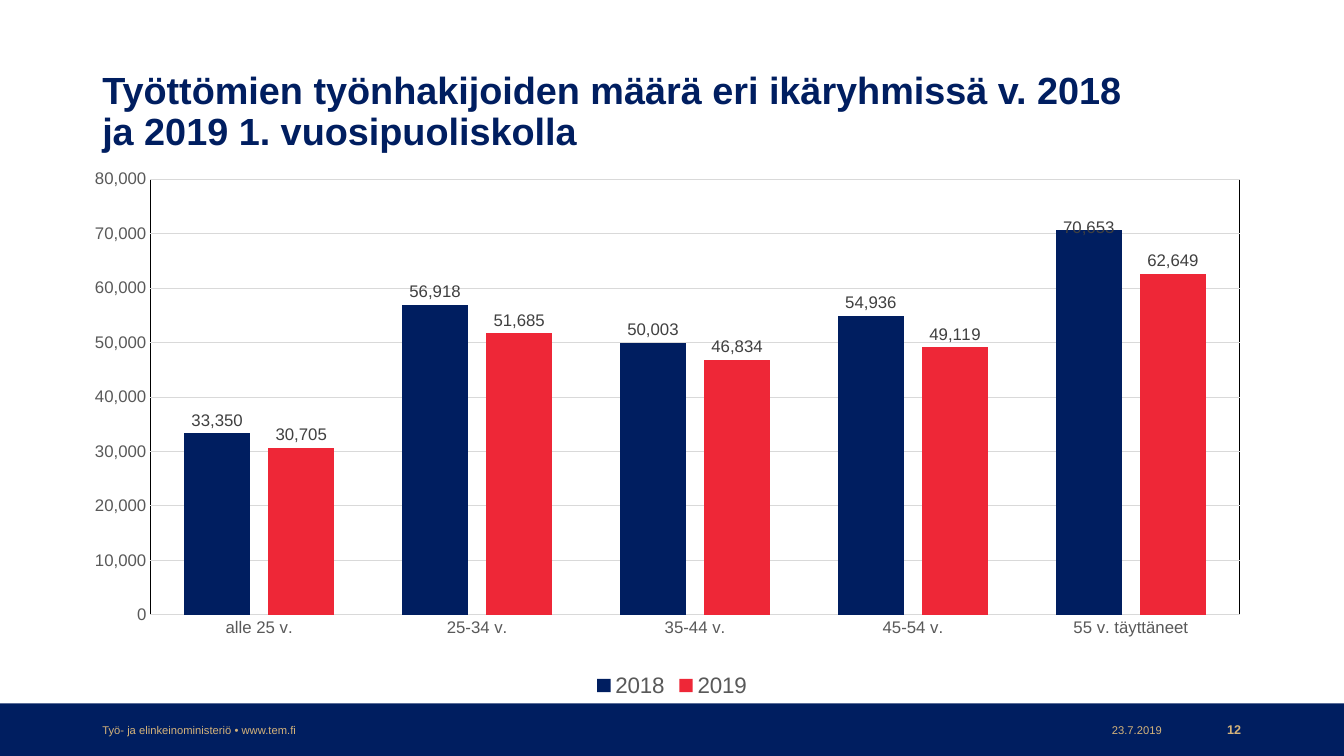
"""Build the slide on unemployed jobseekers by age group in 2018 and 2019."""
from dataclasses import dataclass

from lxml import etree
from pptx import Presentation
from pptx.chart.data import CategoryChartData
from pptx.dml.color import RGBColor
from pptx.enum.chart import XL_CHART_TYPE, XL_LABEL_POSITION, XL_LEGEND_POSITION, XL_TICK_MARK
from pptx.enum.shapes import MSO_SHAPE
from pptx.enum.text import MSO_ANCHOR, PP_ALIGN
from pptx.oxml import parse_xml
from pptx.oxml.ns import nsdecls, qn
from pptx.util import Pt

COLUMNS = XL_CHART_TYPE.COLUMN_CLUSTERED
OUTSIDE_END = XL_LABEL_POSITION.OUTSIDE_END
BOTTOM = XL_LEGEND_POSITION.BOTTOM
NO_TICK = XL_TICK_MARK.NONE
RECTANGLE = MSO_SHAPE.RECTANGLE
MIDDLE = MSO_ANCHOR.MIDDLE
LEFT, RIGHT = PP_ALIGN.LEFT, PP_ALIGN.RIGHT


@dataclass(frozen=True)
class Theme:
    font: str = "Arial"
    navy: str = "001E60"
    red: str = "EE2737"
    gold: str = "D5B37A"
    white: str = "FFFFFF"
    black: str = "000000"
    grid: str = "D9D9D9"
    axis_text: str = "595959"
    label_text: str = "404040"
    title_size: float = 27
    legend_size: float = 16
    chart_size: float = 12
    number_size: float = 9
    footer_size: float = 8


theme = Theme()


def style_font(font, size, color, bold=False):
    values = {"name": theme.font, "size": Pt(size), "bold": bold}
    for attribute, value in values.items():
        setattr(font, attribute, value)
    font.color.rgb = RGBColor.from_string(color)


def manual_layout(**values):
    layout = parse_xml(f"<c:layout {nsdecls('c')}><c:manualLayout/></c:layout>")
    for name, value in values.items():
        etree.SubElement(layout[0], qn(f"c:{name}")).set("val", str(value))
    return layout


presentation = Presentation()
presentation.slide_width, presentation.slide_height = Pt(960), Pt(540)
slide = presentation.slides.add_slide(presentation.slide_layouts[6])

footer_bar = slide.shapes.add_shape(RECTANGLE, Pt(0), Pt(502.5), Pt(960), Pt(37.5))
footer_bar.shadow.inherit = False
footer_bar.fill.solid()
footer_bar.fill.fore_color.rgb = RGBColor.from_string(theme.navy)
footer_bar.line.fill.background()

title = "Työttömien työnhakijoiden määrä eri ikäryhmissä v. 2018 ja 2019 1. vuosipuoliskolla"
texts = [
    (title, (66, 41.5, 756, 78.5), LEFT, theme.title_size, theme.navy, True),
    ("23.7.2019", (763, 513, 74, 16.5), RIGHT, theme.footer_size, theme.gold, False),
    ("Työ- ja elinkeinoministeriö • www.tem.fi", (66, 513, 323, 16.5), LEFT,
     theme.footer_size, theme.gold, False),
    ("12", (837, 513, 56.5, 16.5), RIGHT, theme.number_size, theme.gold, True),
]
for text, box, alignment, size, color, bold in texts:
    text_box = slide.shapes.add_textbox(*map(Pt, box))
    frame = text_box.text_frame
    frame.word_wrap = True
    frame.vertical_anchor = MIDDLE
    paragraph = frame.paragraphs[0]
    paragraph.text = text
    paragraph.alignment = alignment
    paragraph.line_spacing = 0.9 if text == title else 1.0
    style_font(paragraph.runs[0].font, size, color, bold)

chart_data = CategoryChartData(number_format="#,##0")
chart_data.categories = ["alle 25 v.", "25-34 v.", "35-44 v.", "45-54 v.", "55 v. täyttäneet"]
chart_data.add_series("2018", (33350, 56918, 50003, 54936, 70653))
chart_data.add_series("2019", (30705, 51685, 46834, 49119, 62649))
chart = slide.shapes.add_chart(COLUMNS, Pt(66), Pt(112.5), Pt(828), Pt(389), chart_data).chart
chart.has_title = False
style_font(chart.font, theme.chart_size, theme.black)

chart.has_legend = True
chart.legend.position = BOTTOM
chart.legend.include_in_layout = False
style_font(chart.legend.font, theme.legend_size, theme.axis_text)

category_axis, value_axis = chart.category_axis, chart.value_axis
for axis in (category_axis, value_axis):
    axis.major_tick_mark = axis.minor_tick_mark = NO_TICK
    style_font(axis.tick_labels.font, theme.chart_size, theme.axis_text)
value_axis.minimum_scale, value_axis.maximum_scale, value_axis.major_unit = 0, 80000, 10000
value_axis.tick_labels.number_format = "#,##0"
value_axis.tick_labels.number_format_is_linked = False
value_axis.format.line.fill.background()
for line in (category_axis.format.line, value_axis.major_gridlines.format.line):
    line.width = Pt(0.75)
    line.color.rgb = RGBColor.from_string(theme.grid)

plot = chart.plots[0]
plot.gap_width, plot.overlap, plot.vary_by_categories = 102, -27, False
for series, color in zip(plot.series, (theme.navy, theme.red)):
    series.format.fill.solid()
    series.format.fill.fore_color.rgb = RGBColor.from_string(color)
    series.invert_if_negative = False
    labels = series.data_labels
    label_format = {"show_value": True, "position": OUTSIDE_END,
                    "number_format": "#,##0", "number_format_is_linked": False}
    for attribute, value in label_format.items():
        setattr(labels, attribute, value)
    style_font(labels.font, theme.chart_size, theme.label_text)

tallest_label = plot.series[0].points[4].data_label
tallest_label.position = OUTSIDE_END
style_font(tallest_label.font, theme.chart_size, theme.label_text)

chart_space = chart._chartSpace
label_element = chart_space.find(f".//{qn('c:dLbl')}")
label_element.insert(1, manual_layout(x=0, y=0.02))

plot_area = chart_space.find(f".//{qn('c:plotArea')}")
for old_layout in plot_area.findall(qn("c:layout")):
    plot_area.remove(old_layout)
plot_area.insert(0, manual_layout(layoutTarget="inner", xMode="edge", yMode="edge",
                                  x=0.05, y=0.04, w=0.94, h=0.8))
plot_area.append(parse_xml(
    f'<c:spPr {nsdecls("c", "a")}><a:noFill/><a:ln w="9525"><a:solidFill>'
    f'<a:srgbClr val="{theme.black}"/></a:solidFill></a:ln></c:spPr>'))
chart_space.find(qn("c:chart")).addnext(parse_xml(
    f'<c:spPr {nsdecls("c", "a")}><a:solidFill><a:srgbClr val="{theme.white}"/></a:solidFill>'
    f'<a:ln><a:noFill/></a:ln></c:spPr>'))

presentation.save("out.pptx")
